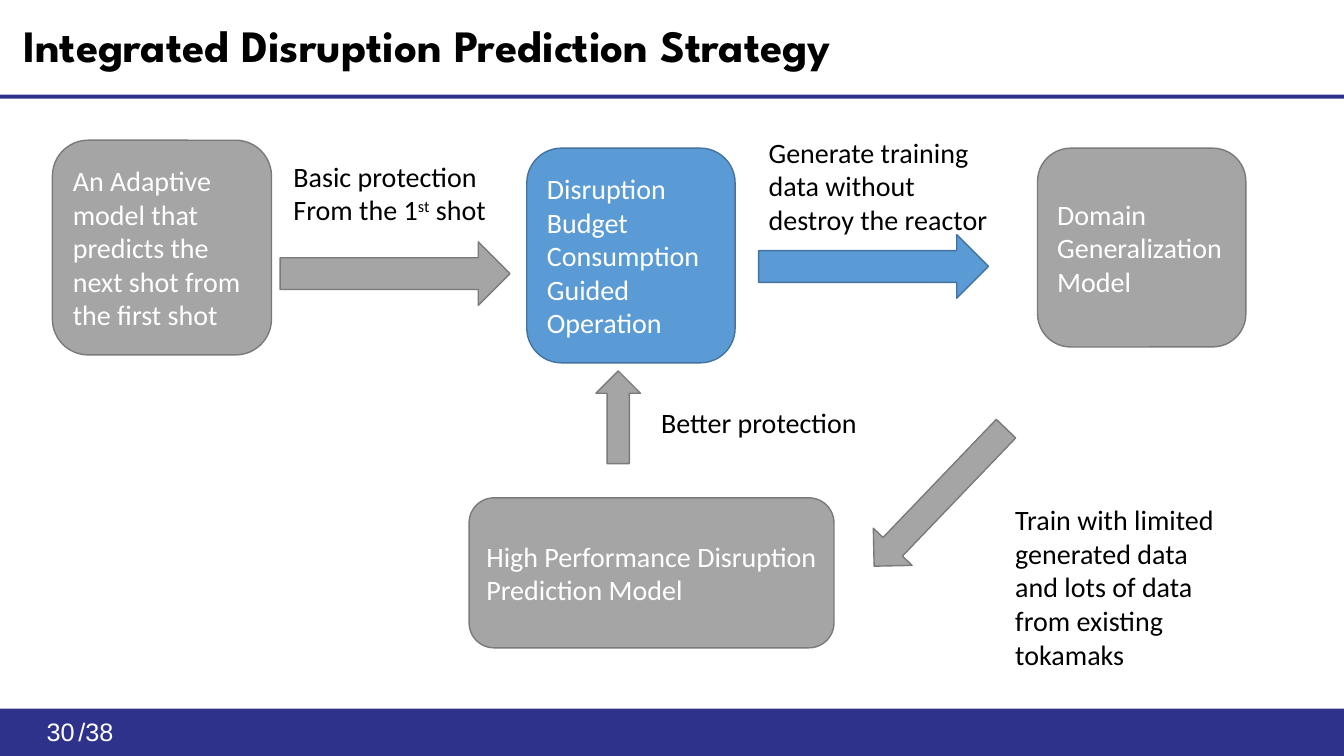
"""Build the slide on the integrated disruption prediction strategy."""
from pptx import Presentation
from pptx.dml.color import RGBColor
from pptx.enum.shapes import MSO_SHAPE
from pptx.enum.text import MSO_ANCHOR, PP_ALIGN
from pptx.util import Inches, Pt

COLOURS = {
    "navy": "2F328B",
    "grey": "A5A5A5",
    "grey edge": "7A7A7A",
    "blue": "5B9BD5",
    "blue edge": "43739E",
    "white": "FFFFFF",
    "black": "000000",
}


class StrategySlide:
    """Hold the style and the current slide; places are percent of its size."""

    def __init__(self, deck):
        self.width, self.height = deck.slide_width, deck.slide_height
        self.page = deck.slides.add_slide(deck.slide_layouts[5])

    def place(self, left, top, width, height):
        return (
            round(left * self.width / 100),
            round(top * self.height / 100),
            round(width * self.width / 100),
            round(height * self.height / 100),
        )

    def colour(self, name):
        return RGBColor.from_string(COLOURS[name])

    def style_span(self, span, colour, size=20, font="Calibri"):
        span.font.size = Pt(size)
        span.font.name = font
        span.font.color.rgb = self.colour(colour)

    def set_text(self, frame, text, colour, align=PP_ALIGN.LEFT, **style):
        frame.text = text
        for para in frame.paragraphs:
            para.alignment = align
            for span in para.runs:
                self.style_span(span, colour, **style)

    def title(self, text, area):
        box = self.page.shapes.title
        box.left, box.top, box.width, box.height = self.place(*area)
        frame = box.text_frame
        frame.vertical_anchor = MSO_ANCHOR.MIDDLE
        self.set_text(frame, text, "black", size=32, font="League Spartan")
        para = frame.paragraphs[0]
        para.line_spacing = 0.9
        para.runs[0].font.bold = True

    def shape(self, kind, area, fill, edge=None, rotation=0):
        shape = self.page.shapes.add_shape(kind, *self.place(*area))
        shape.shadow.inherit = False
        shape.rotation = rotation
        shape.fill.solid()
        shape.fill.fore_color.rgb = self.colour(fill)
        if edge:
            shape.line.color.rgb = self.colour(edge)
            shape.line.width = Pt(1)
        else:
            shape.line.fill.background()
        return shape

    def bar(self, area):
        self.shape(MSO_SHAPE.RECTANGLE, area, "navy")

    def stage(self, text, area, fill="grey"):
        box = self.shape(MSO_SHAPE.ROUNDED_RECTANGLE, area, fill, f"{fill} edge")
        box.text_frame.word_wrap = True
        box.text_frame.vertical_anchor = MSO_ANCHOR.MIDDLE
        self.set_text(box.text_frame, text, "white")

    def arrow(self, area, fill="grey", kind=MSO_SHAPE.RIGHT_ARROW, rotation=0):
        self.shape(kind, area, fill, f"{fill} edge", rotation)

    def label(self, text, area, colour="black", wrap=True, **style):
        box = self.page.shapes.add_textbox(*self.place(*area))
        box.text_frame.word_wrap = wrap
        self.set_text(box.text_frame, text, colour, **style)
        return box.text_frame

    def ordinal_label(self, text, suffix, ending, area):
        para = self.label(text, area, wrap=False).paragraphs[-1]
        for part in (suffix, ending):
            span = para.add_run()
            span.text = part
            self.style_span(span, "black")
        para.runs[1].font._element.set("baseline", "30000")


def main():
    deck = Presentation()
    deck.slide_width, deck.slide_height = Inches(13.33), Inches(7.5)
    slide = StrategySlide(deck)

    slide.bar((0, 93.75, 100, 6.25))
    slide.bar((0, 12.53, 100, 0.53))
    slide.title("Integrated Disruption Prediction Strategy", (0.98, 0.53, 68.5, 11.6))
    slide.label("/38", (5.1, 94.15, 8.55, 5.33), "white", size=18, font="Arial")
    slide.label("30", (0.4, 94.15, 5.9, 5.33), "white",
                size=18, font="Arial", align=PP_ALIGN.RIGHT)

    slide.stage("An Adaptive model that predicts the next shot from the first shot",
                (3.9, 18.55, 16.3, 28.4))
    slide.stage("Disruption Budget Consumption Guided\nOperation",
                (39.2, 19.6, 15.5, 28.4), "blue")
    slide.stage("Domain Generalization\nModel", (77.2, 19.6, 15.5, 26.3))
    slide.stage("High Performance Disruption Prediction Model",
                (34.9, 65.85, 27.15, 19.85))

    slide.arrow((20.85, 32, 17.1, 8.4))
    slide.arrow((56.45, 31.05, 17.1, 8.4), "blue")
    slide.arrow((67.95, 53.2, 4, 25.2), kind=MSO_SHAPE.DOWN_ARROW, rotation=43.8)
    slide.arrow((42.55, 52.25, 6.9, 5.9), rotation=270)

    slide.ordinal_label("Basic protection\nFrom the 1", "st", " shot",
                        (21.1, 20.4, 16.05, 10.27))
    slide.label("Generate training data without destroy the reactor",
                (56.45, 17.2, 18.9, 14.8))
    slide.label("Train with limited generated data and lots of data from existing tokamaks",
                (74.8, 65.85, 16.5, 23.75))
    slide.label("Better protection", (48.45, 53.05, 16.5, 5.85))

    deck.save("out.pptx")


if __name__ == "__main__":
    main()
